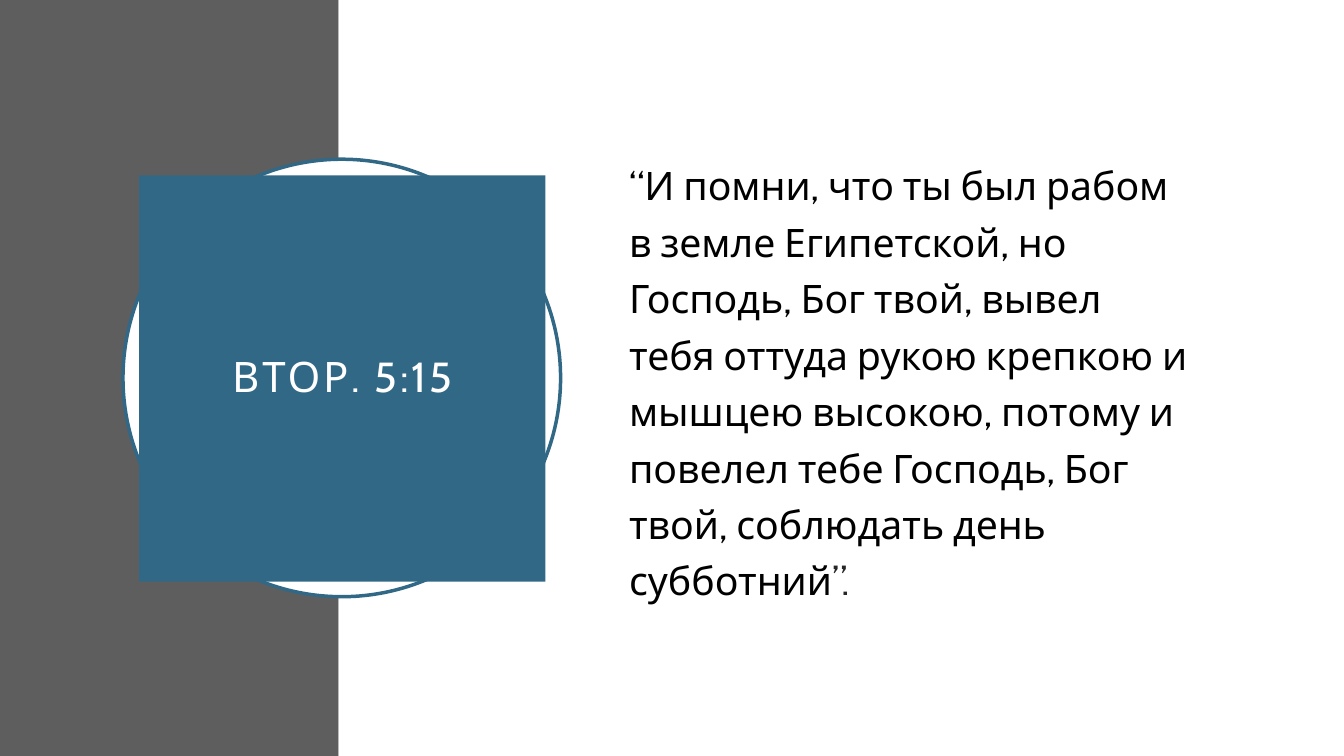
from dataclasses import dataclass

from pptx import Presentation
from pptx.dml.color import RGBColor
from pptx.enum.shapes import MSO_SHAPE
from pptx.enum.text import MSO_ANCHOR, MSO_AUTO_SIZE, PP_ALIGN
from pptx.slide import Slide
from pptx.text.text import _Run
from pptx.util import Inches, Pt

RECT, OVAL = MSO_SHAPE.RECTANGLE, MSO_SHAPE.OVAL
MIDDLE, CENTER, LEFT = MSO_ANCHOR.MIDDLE, PP_ALIGN.CENTER, PP_ALIGN.LEFT
NO_AUTOFIT = MSO_AUTO_SIZE.NONE
TITLE_ONLY = 5


@dataclass(frozen=True)
class Theme:
    font: str = "Cabin"
    title_size: int = 30
    verse_size: int = 28
    title_spacing: int = 2
    white: str = "FFFFFF"
    gray: str = "5E5E5E"
    blue: str = "316886"
    black: str = "000000"
    quote: str = "262626"


@dataclass(frozen=True)
class Box:
    left: float
    top: float
    width: float
    height: float

    def emu(self) -> tuple[int, int, int, int]:
        return (Inches(self.left), Inches(self.top),
                Inches(self.width), Inches(self.height))


@dataclass(frozen=True)
class Panel:
    kind: MSO_SHAPE
    box: Box
    fill: str
    line: str | None = None


THEME = Theme()
PAGE_W, PAGE_H, SIDEBAR_W = 13.33, 7.5, 3.36
PANELS = (
    Panel(RECT, Box(0, 0, SIDEBAR_W, PAGE_H), THEME.gray),
    Panel(RECT, Box(SIDEBAR_W, 0, PAGE_W - SIDEBAR_W, PAGE_H), THEME.white),
    Panel(OVAL, Box(1.22, 1.58, 4.34, 4.34), THEME.white, THEME.blue),
)
TITLE_BOX = Box(1.38, 1.74, 4.03, 4.03)
VERSE_BOX = Box(6.14, 1.18, 5.82, 5.14)
TITLE = "ВТОР. 5:15"
VERSE = (
    "“И помни, что ты был рабом в земле Египетской, но Господь, Бог твой, "
    "вывел тебя оттуда рукою крепкою и мышцею высокою, потому и повелел тебе "
    "Господь, Бог твой, соблюдать день субботний"
)
VERSE_END = "”."


def rgb(color: str) -> RGBColor:
    return RGBColor.from_string(color)


def add_panel(s: Slide, panel: Panel) -> None:
    sp = s.shapes.add_shape(panel.kind, *panel.box.emu())
    sp.shadow.inherit = False
    sp.fill.solid()
    sp.fill.fore_color.rgb = rgb(panel.fill)
    if panel.line:
        sp.line.color.rgb = rgb(panel.line)
        sp.line.width = Pt(2.5)
    else:
        sp.line.fill.background()


def format_run(r: _Run, size: int, color: str) -> None:
    r.font.name = THEME.font
    r.font.size = Pt(size)
    r.font.bold = False
    r.font.color.rgb = rgb(color)


def place_title(s: Slide) -> None:
    """Turn the title placeholder into the blue square in front of the ring."""
    sp = s.shapes.title
    sp.left, sp.top, sp.width, sp.height = TITLE_BOX.emu()
    sp.fill.solid()
    sp.fill.fore_color.rgb = rgb(THEME.blue)
    sp.line.fill.background()
    tf = sp.text_frame
    tf.text = TITLE
    tf.word_wrap = True
    tf.auto_size = NO_AUTOFIT
    tf.vertical_anchor = MIDDLE
    tf.margin_left = tf.margin_right = Inches(0.2)
    tf.margin_top = tf.margin_bottom = Inches(0.2)
    p = tf.paragraphs[0]
    p.alignment = CENTER
    p.line_spacing = 0.9
    r = p.runs[0]
    format_run(r, THEME.title_size, THEME.white)
    r.font._element.set("spc", str(THEME.title_spacing * 100))
    sp.element.getparent().append(sp.element)


def add_verse(s: Slide) -> None:
    tf = s.shapes.add_textbox(*VERSE_BOX.emu()).text_frame
    tf.word_wrap = True
    tf.vertical_anchor = MIDDLE
    p = tf.paragraphs[0]
    p.alignment = LEFT
    p.line_spacing = 1.2
    for text, color in ((VERSE, THEME.black), (VERSE_END, THEME.quote)):
        r = p.add_run()
        r.text = text
        format_run(r, THEME.verse_size, color)


def main() -> None:
    prs = Presentation()
    prs.slide_width, prs.slide_height = Inches(PAGE_W), Inches(PAGE_H)
    s = prs.slides.add_slide(prs.slide_layouts[TITLE_ONLY])
    for panel in PANELS:
        add_panel(s, panel)
    place_title(s)
    add_verse(s)
    prs.save("out.pptx")


if __name__ == "__main__":
    main()
